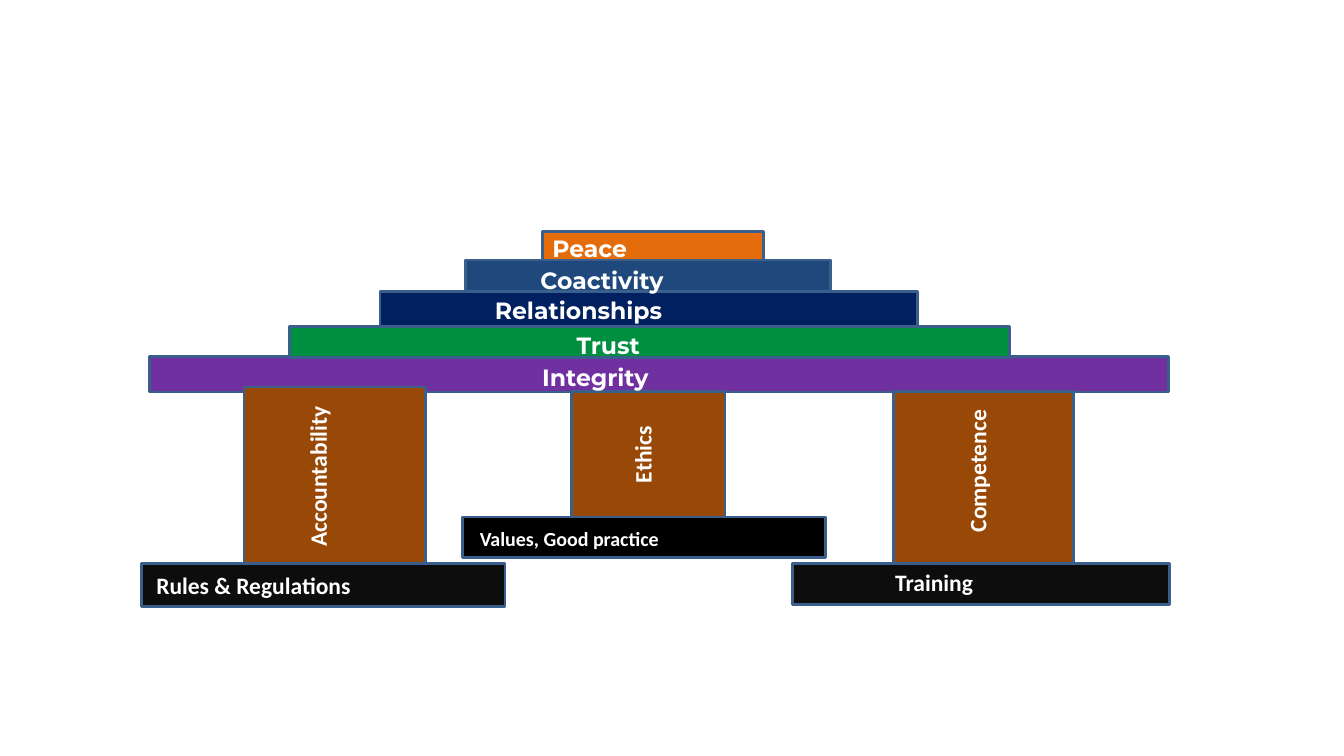
from dataclasses import dataclass

from pptx import Presentation
from pptx.dml.color import RGBColor
from pptx.enum.shapes import MSO_SHAPE
from pptx.enum.text import MSO_ANCHOR, MSO_AUTO_SIZE, PP_ALIGN
from pptx.slide import Slide
from pptx.util import Inches, Pt

RECT = MSO_SHAPE.RECTANGLE
TOP = MSO_ANCHOR.TOP
GROW = MSO_AUTO_SIZE.SHAPE_TO_FIT_TEXT
LEFT = PP_ALIGN.LEFT

WHITE = RGBColor(0xFF, 0xFF, 0xFF)
BLACK = RGBColor(0x00, 0x00, 0x00)
COAL = RGBColor(0x0D, 0x0D, 0x0D)
BROWN = RGBColor(0x98, 0x48, 0x07)
PURPLE = RGBColor(0x70, 0x30, 0xA0)
GREEN = RGBColor(0x00, 0x8E, 0x40)
ORANGE = RGBColor(0xE4, 0x6C, 0x0A)
BLUE = RGBColor(0x1F, 0x49, 0x7D)
NAVY = RGBColor(0x00, 0x20, 0x60)
EDGE = RGBColor(0x3A, 0x5F, 0x8C)

HEAD = "Montserrat"
BODY = "Calibri"


@dataclass
class Block:
    x: float
    y: float
    w: float
    h: float
    fill: RGBColor


@dataclass
class Label:
    text: str
    x: float
    y: float
    w: float
    font: str = BODY
    turn: int = 0
    size: float = 16.8
    h: float = 0.38
    inset: float = 0.1


# Back to front: roof steps, pillars, bases
BLOCKS = [
    Block(1.48, 3.54, 10.11, 0.35, PURPLE),
    Block(2.87, 3.24, 7.14, 0.31, GREEN),
    Block(5.38, 2.3, 2.19, 0.35, ORANGE),
    Block(4.62, 2.58, 3.62, 0.35, BLUE),
    Block(3.77, 2.89, 5.33, 0.35, NAVY),
    Block(8.86, 3.88, 1.79, 1.71, BROWN),
    Block(2.42, 3.84, 1.8, 1.78, BROWN),
    Block(5.67, 3.88, 1.52, 1.31, BROWN),
    Block(7.86, 5.59, 3.74, 0.41, COAL),
    Block(1.4, 5.59, 3.61, 0.43, COAL),
    Block(4.59, 5.13, 3.6, 0.4, BLACK),
]

LABELS = [
    # Roof steps
    Label("Peace", 5.38, 2.27, 2.66, HEAD),
    Label("Coactivity", 5.26, 2.59, 2.78, HEAD),
    Label("Relationships", 4.81, 2.89, 3.23, HEAD),
    Label("Trust", 5.62, 3.23, 1.98, HEAD),
    Label("Integrity", 5.28, 3.55, 2.47, HEAD),
    # Pillars
    Label("Accountability", 2.31, 4.49, 1.68, turn=270),
    Label("Ethics", 5.82, 4.15, 1.1, turn=270),
    Label("Competence", 8.77, 4.27, 1.84, turn=270),
    # Bases
    Label("Rules & Regulations", 1.4, 5.62, 3.61, inset=0.15),
    Label("Values, Good practice", 4.66, 5.17, 3.38, size=14.3, h=0.34),
    Label("Training", 8.78, 5.59, 1.98),
]


def draw_block(slide: Slide, block: Block) -> None:
    shape = slide.shapes.add_shape(
        RECT, Inches(block.x), Inches(block.y), Inches(block.w), Inches(block.h))
    shape.shadow.inherit = False
    shape.fill.solid()
    shape.fill.fore_color.rgb = block.fill
    shape.line.color.rgb = EDGE
    shape.line.width = Pt(2)


def draw_label(slide: Slide, label: Label) -> None:
    box = slide.shapes.add_textbox(
        Inches(label.x), Inches(label.y), Inches(label.w), Inches(label.h))
    box.rotation = label.turn
    frame = box.text_frame
    frame.word_wrap = True
    frame.auto_size = GROW
    frame.vertical_anchor = TOP
    frame.margin_left = Inches(label.inset)
    para = frame.paragraphs[0]
    para.alignment = LEFT
    run = para.add_run()
    run.text = label.text
    run.font.name = label.font
    run.font.size = Pt(label.size)
    run.font.bold = True
    run.font.color.rgb = WHITE


def main() -> None:
    deck = Presentation()
    deck.slide_width = Inches(13.33)
    deck.slide_height = Inches(7.5)
    slide = deck.slides.add_slide(deck.slide_layouts[6])
    for block in BLOCKS:
        draw_block(slide, block)
    for label in LABELS:
        draw_label(slide, label)
    deck.save("out.pptx")


if __name__ == "__main__":
    main()
